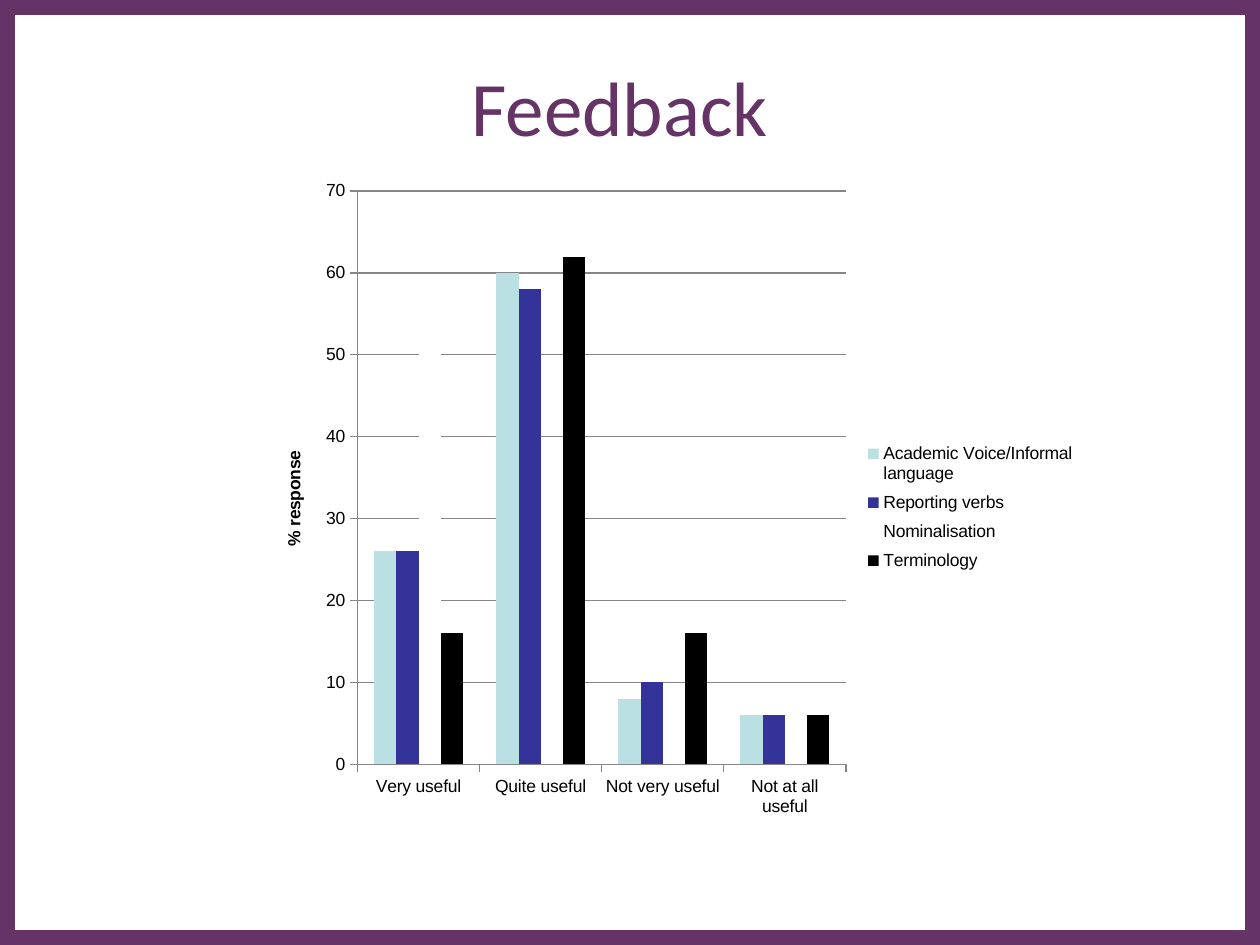
from dataclasses import dataclass

from pptx import Presentation
from pptx.chart.data import CategoryChartData
from pptx.dml.color import RGBColor
from pptx.enum.chart import XL_CHART_TYPE, XL_LEGEND_POSITION, XL_TICK_MARK
from pptx.enum.shapes import MSO_SHAPE
from pptx.enum.text import MSO_ANCHOR, PP_ALIGN
from pptx.oxml import parse_xml
from pptx.oxml.ns import nsdecls, qn
from pptx.util import Inches, Pt

RECT = MSO_SHAPE.RECTANGLE
COLUMN = XL_CHART_TYPE.COLUMN_CLUSTERED
RIGHT = XL_LEGEND_POSITION.RIGHT
OUT, NONE = XL_TICK_MARK.OUTSIDE, XL_TICK_MARK.NONE
CENTER, MIDDLE = PP_ALIGN.CENTER, MSO_ANCHOR.MIDDLE


@dataclass(frozen=True)
class Theme:
    """Colours, fonts and type sizes of the slide."""
    plum: str = "663366"
    paper: str = "FFFFFF"
    ink: str = "000000"
    grid: str = "868686"
    head: str = "Calibri"
    body: str = "Arial"
    large: int = 44
    small: int = 10


THEME = Theme()
WIDE, HIGH, EDGE = 10, 7.5, 0.12
CATS = ["Very useful", "Quite useful", "Not very useful", "Not at all useful"]
SERIES = [
    ("Academic Voice/Informal language", (26, 60, 8, 6), "BBE0E3"),
    ("Reporting verbs", (26, 58, 10, 6), "333399"),
    ("Nominalisation", (52, 38, 6, 4), THEME.paper),
    ("Terminology", (16, 62, 16, 6), THEME.ink),
]


def rgb(code):
    """Turn a hex code into a colour."""
    return RGBColor.from_string(code)


def style(font, face, size, color, bold=False):
    """Set the look of a font."""
    font.name, font.size, font.bold = face, Pt(size), bold
    font.color.rgb = rgb(color)


def write(frame, text, align=CENTER, anchor=MIDDLE, **look):
    """Put one formatted paragraph into a text frame."""
    frame.word_wrap = True
    frame.vertical_anchor = anchor
    para = frame.paragraphs[0]
    para.alignment = align
    run = para.add_run()
    run.text = text
    style(run.font, **look)


def panel(slide, inset, color):
    """Draw a plain rectangle set in from the slide's edges."""
    size = (WIDE - 2 * inset, HIGH - 2 * inset)
    box = slide.shapes.add_shape(RECT, *map(Inches, (inset, inset, *size)))
    box.shadow.inherit = False
    box.fill.solid()
    box.fill.fore_color.rgb = rgb(color)
    box.line.fill.background()


def place(part, index, x, y, w, h, inner=False):
    """Fix a chart part at shares of the chart's size."""
    for old in part.findall(qn("c:layout")):
        part.remove(old)
    target = '<c:layoutTarget val="inner"/>' if inner else ""
    modes = '<c:xMode val="edge"/><c:yMode val="edge"/>'
    sides = "".join(f'<c:{key} val="{val}"/>' for key, val in zip("xywh", (x, y, w, h)))
    part.insert(index, parse_xml(
        f'<c:layout {nsdecls("c")}><c:manualLayout>{target}{modes}{sides}'
        "</c:manualLayout></c:layout>"))


def axes(chart):
    """Format both axes and the grid."""
    vals, cats = chart.value_axis, chart.category_axis
    vals.minimum_scale, vals.maximum_scale, vals.major_unit = 0, 70, 10
    vals.has_major_gridlines = True
    for line in (vals.format.line, cats.format.line, vals.major_gridlines.format.line):
        line.color.rgb = rgb(THEME.grid)
        line.width = Pt(0.75)
    for axis in (vals, cats):
        axis.major_tick_mark, axis.minor_tick_mark = OUT, NONE
        style(axis.tick_labels.font, THEME.body, THEME.small, THEME.ink)
    run = vals.axis_title.text_frame.paragraphs[0].add_run()
    run.text = "% response"
    style(run.font, THEME.body, THEME.small, THEME.ink, bold=True)


def columns(slide, *area):
    """Add the column chart with its legend."""
    data = CategoryChartData()
    data.categories = CATS
    for name, vals, _ in SERIES:
        data.add_series(name, vals)
    chart = slide.shapes.add_chart(COLUMN, *map(Inches, area), data).chart
    style(chart.font, THEME.body, THEME.small, THEME.ink)
    chart.has_title = False
    plot = chart.plots[0]
    plot.gap_width, plot.vary_by_categories = 150, False
    for item, (_, _, color) in zip(plot.series, SERIES):
        item.format.fill.solid()
        item.format.fill.fore_color.rgb = rgb(color)
        item.invert_if_negative = False
    axes(chart)
    chart.has_legend = True
    legend = chart.legend
    legend.position, legend.include_in_layout = RIGHT, False
    style(legend.font, THEME.body, THEME.small, THEME.ink)
    root = chart.element
    place(root.find(".//" + qn("c:plotArea")), 0, 0.12, 0.03, 0.59, 0.87, inner=True)
    place(root.find(".//" + qn("c:legend")), 1, 0.73, 0.4, 0.26, 0.22)


def main():
    """Build and save the feedback slide."""
    deck = Presentation()
    deck.slide_width, deck.slide_height = Inches(WIDE), Inches(HIGH)
    slide = deck.slides.add_slide(deck.slide_layouts[6])
    panel(slide, 0, THEME.plum)
    panel(slide, EDGE, THEME.paper)
    title = slide.shapes.add_textbox(*map(Inches, (0.67, 0.21, 8.5, 1.25)))
    write(title.text_frame, "Feedback", face=THEME.head, size=THEME.large, color=THEME.plum)
    columns(slide, 2.05, 1.36, 6.57, 5.23)
    deck.save("out.pptx")


if __name__ == "__main__":
    main()
